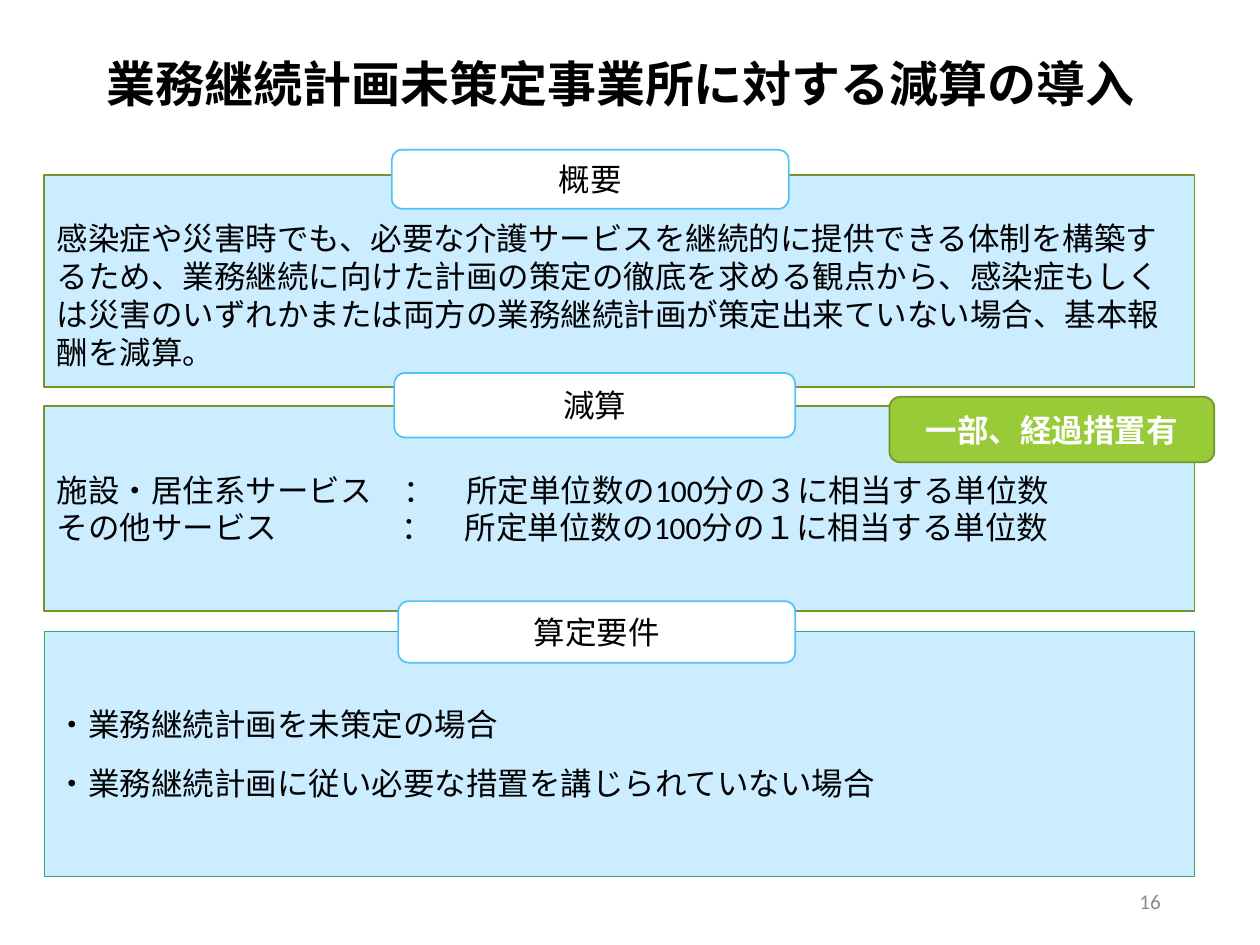
from dataclasses import dataclass
from typing import Optional

from lxml.etree import SubElement
from pptx import Presentation
from pptx.dml.color import RGBColor
from pptx.enum.shapes import MSO_SHAPE
from pptx.enum.text import MSO_ANCHOR, MSO_AUTO_SIZE, PP_ALIGN
from pptx.oxml.ns import qn
from pptx.util import Cm, Pt


@dataclass(frozen=True)
class Theme:
    font: str = "Calibri"
    ink: str = "000000"
    white: str = "FFFFFF"
    muted: str = "8C8C8C"
    panel: str = "CCECFF"
    olive: str = "719629"
    teal: str = "37A76F"
    sky: str = "51C3F9"
    lime: str = "99CB38"
    title_size: int = 28
    text_size: int = 18
    number_size: int = 12


THEME = Theme()


@dataclass(frozen=True)
class Area:
    left: float
    top: float
    width: float
    height: float

    def lengths(self) -> tuple:
        return Cm(self.left), Cm(self.top), Cm(self.width), Cm(self.height)


@dataclass(frozen=True)
class TextStyle:
    size: int = THEME.text_size
    color: str = THEME.ink
    bold: bool = False
    align: PP_ALIGN = PP_ALIGN.LEFT
    gap: float = 0
    line_spacing: Optional[float] = None
    tab: Optional[float] = None


@dataclass(frozen=True)
class Box:
    area: Area
    lines: tuple
    fill: str
    border: str
    style: TextStyle = TextStyle()
    border_width: float = 1
    rounded: bool = False
    top_inset: Optional[float] = None


LABEL = TextStyle(align=PP_ALIGN.CENTER)
BADGE = TextStyle(color=THEME.white, bold=True, align=PP_ALIGN.CENTER)


def panel(top: float, height: float, *lines: str, border: str = THEME.olive, **options) -> Box:
    return Box(Area(0.89, top, 23.19, height), lines, THEME.panel, border, **options)


def label(area: Area, heading: str) -> Box:
    return Box(area, (heading,), THEME.white, THEME.sky, LABEL, rounded=True)


BOXES = (
    panel(12.73, 4.93, "・業務継続計画を未策定の場合",
          "・業務継続計画に従い必要な措置を講じられていない場合",
          border=THEME.teal, border_width=0.5, style=TextStyle(gap=6)),
    panel(8.18, 4.14, "施設・居住系サービス　：　所定単位数の100分の３に相当する単位数",
          "その他サービス\t：　所定単位数の100分の１に相当する単位数",
          style=TextStyle(tab=6.96)),
    panel(3.53, 4.27,
          "感染症や災害時でも、必要な介護サービスを継続的に提供できる体制を構築するため、"
          "業務継続に向けた計画の策定の徹底を求める観点から、感染症もしくは災害のいずれか"
          "または両方の業務継続計画が策定出来ていない場合、基本報酬を減算。",
          top_inset=0.89),
    label(Area(7.9, 3.02, 8, 1.19), "概要"),
    label(Area(7.95, 7.52, 8.08, 1.3), "減算"),
    label(Area(8.03, 12.12, 8, 1.24), "算定要件"),
    Box(Area(17.93, 8, 6.55, 1.32), ("一部、経過措置有",), THEME.lime, THEME.olive,
        BADGE, rounded=True),
)


def write_lines(frame, lines: tuple, style: TextStyle) -> None:
    frame.word_wrap = True
    frame.auto_size = MSO_AUTO_SIZE.NONE
    frame.vertical_anchor = MSO_ANCHOR.MIDDLE
    for index, line in enumerate(lines):
        paragraph = frame.add_paragraph() if index else frame.paragraphs[0]
        paragraph.alignment = style.align
        paragraph.space_before = paragraph.space_after = Pt(style.gap)
        if style.line_spacing:
            paragraph.line_spacing = style.line_spacing
        if style.tab and "\t" in line:
            tab_list = SubElement(paragraph._p.get_or_add_pPr(), qn("a:tabLst"))
            SubElement(tab_list, qn("a:tab"), pos=str(Cm(style.tab)), algn="l")
        run = paragraph.add_run()
        run.text = line
        run.font.name = THEME.font
        run.font.size = Pt(style.size)
        run.font.bold = style.bold
        run.font.color.rgb = RGBColor.from_string(style.color)


def draw_box(slide, box: Box) -> None:
    outline = MSO_SHAPE.ROUNDED_RECTANGLE if box.rounded else MSO_SHAPE.RECTANGLE
    shape = slide.shapes.add_shape(outline, *box.area.lengths())
    shape.shadow.inherit = False
    shape.fill.solid()
    shape.fill.fore_color.rgb = RGBColor.from_string(box.fill)
    shape.line.color.rgb = RGBColor.from_string(box.border)
    shape.line.width = Pt(box.border_width)
    write_lines(shape.text_frame, box.lines, box.style)
    if box.top_inset is not None:
        shape.text_frame.vertical_anchor = MSO_ANCHOR.TOP
        shape.text_frame.margin_top = Cm(box.top_inset)


def main() -> None:
    deck = Presentation()
    deck.slide_width, deck.slide_height = Cm(25.4), Cm(19.05)
    slide = deck.slides.add_slide(deck.slide_layouts[5])

    title = slide.shapes.title
    title.left, title.top, title.width, title.height = Area(1.9, 0.2, 22.61, 3.1).lengths()
    write_lines(title.text_frame, ("業務継続計画未策定事業所に対する減算の導入",),
                TextStyle(THEME.title_size, bold=True, line_spacing=0.9))

    page_number = slide.shapes.add_textbox(*Area(17.93, 17.65, 5.72, 1.02).lengths())
    write_lines(page_number.text_frame, ("16",),
                TextStyle(THEME.number_size, THEME.muted, align=PP_ALIGN.RIGHT))

    for box in BOXES:
        draw_box(slide, box)
    deck.save("out.pptx")


if __name__ == "__main__":
    main()
